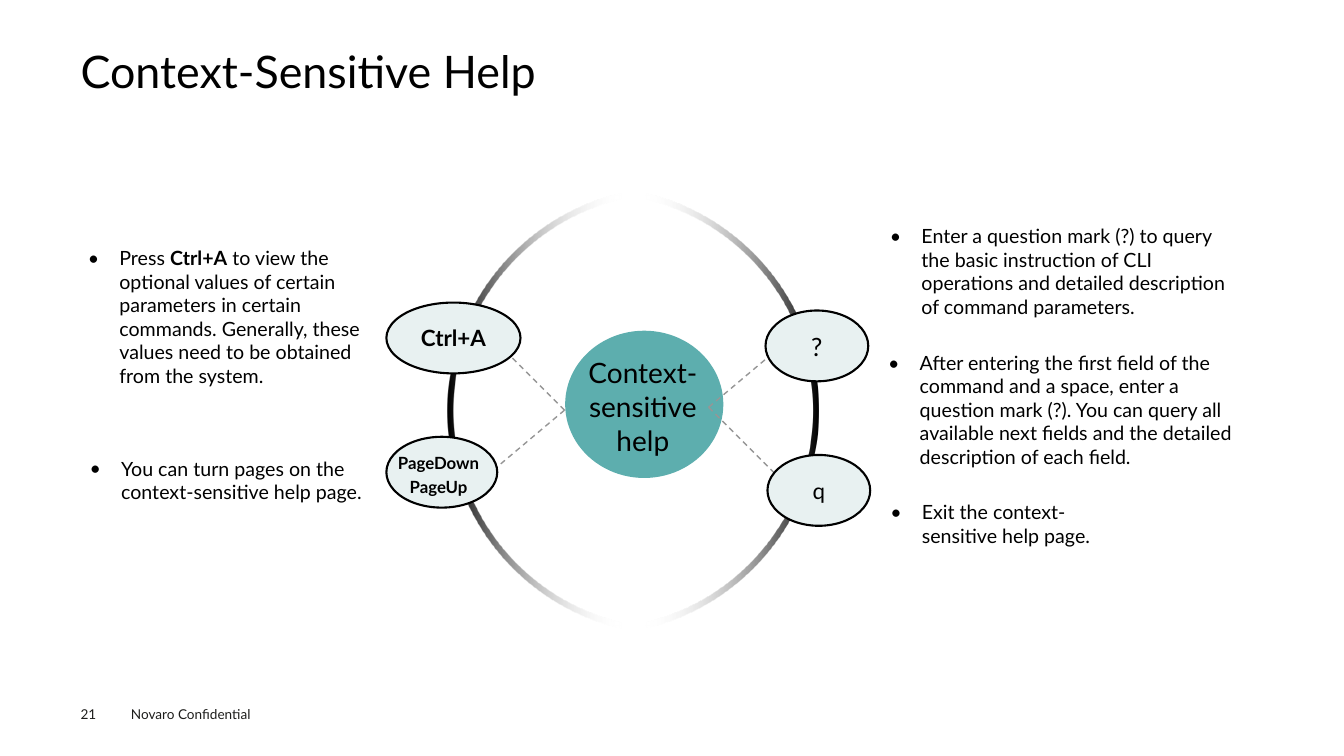
"""Build the Context-Sensitive Help slide."""
from lxml import etree
from pptx import Presentation
from pptx import util as u
from pptx.dml.color import RGBColor
from pptx.enum import dml, shapes, text
from pptx.oxml.ns import qn

THEME = {
    "font": "Lato", "ink": "000000", "footer_ink": "1D1D1B", "hub": "5DAEAE",
    "node": "E8F1F1", "spoke": "969696", "fade": "FFFFFF",
    "title": 32, "hub_size": 20, "body": 14, "key": 12, "footer": 9.7,
}
INSET = (7.2, 3.6)
TITLE = ("Context-Sensitive Help", (57.6, 35.3, 844.6, 38.9))
FOOTERS = [
    ("Novaro Confidential", (86.4, 500.4, 115, 19.4), INSET),
    ("21", (57.6, 504, 39.6, 11.5), (0, 0)),
]
HUB = (403.7, 236.2, 113, 105.2)
HUB_LABEL = ("Context-sensitive help", (394.2, 250.6, 130, 94.3))
NOTES = [
    ([("Enter a question mark (?) to query the basic instruction of CLI operations "
       "and detailed description of command parameters.", False)], (628.6, 156.5, 256, 104.4)),
    ([("After entering the first field of the command and a space, enter a question "
       "mark (?). You can query all available next fields and the detailed "
       "description of each field.", False)], (627.4, 247, 274, 123.8)),
    ([("Exit the context-sensitive help page.", False)], (628.9, 353.5, 188, 46)),
    ([("Press ", False), ("Ctrl+A", True),
      (" to view the optional values of certain parameters in certain commands. "
       "Generally, these values need to be obtained from the system.", False)],
     (55.7, 172.1, 232.6, 123.8)),
    ([("You can turn pages on the context-sensitive help page.", False)],
     (56.9, 322.6, 226.8, 65.5)),
]
NODES = [
    ("Ctrl+A", (276, 216.1, 95.8, 50.6), 16, True),
    ("", (276, 312, 79.2, 50.6), 12, True),
    ("?", (546.8, 221.8, 73.4, 50.6), 18, False),
    ("q", (548.2, 325, 73.4, 50.6), 16, False),
]
PAGE_KEYS = (["PageDown", "PageUp"], (267.3, 320, 92, 40))
SPOKES = [
    ((506.2, 290.9), [(560.9, 244.8), (560.9, 345.6)]),
    ((403.2, 293), [(348.5, 339.1), (348.5, 238.3)]),
]
ARC_Y, OUTER, INNER, ROUNDNESS = 293.3, 159.1, 154.8, 0.55
ARCS = [
    (425.5, 1, [("fade", 0.22, 0), ("ink", 1, 100000)]),
    (478.8, -1, [("ink", 0, 100000), ("fade", 0.78, 0)]),
]


def color(name):
    return RGBColor.from_string(THEME[name])


def set_font(font, size, bold=False, ink="ink"):
    font.name, font.size, font.bold = THEME["font"], u.Pt(size), bold
    font.color.rgb = color(ink)


def set_insets(frame, inset):
    frame.margin_left = frame.margin_right = u.Pt(inset[0])
    frame.margin_top = frame.margin_bottom = u.Pt(inset[1])


def add_text(page, lines, area, size, align=None, inset=INSET, bold=False, ink="ink"):
    frame = page.shapes.add_textbox(*map(u.Pt, area)).text_frame
    frame.word_wrap = True
    set_insets(frame, inset)
    frame.text = "\n".join(lines)
    for para in frame.paragraphs:
        para.alignment = align
        set_font(para.font, size, bold, ink)
    return frame


def add_note(page, spans, area):
    frame = add_text(page, [""], area, THEME["body"])
    para = frame.paragraphs[0]
    properties = para._p.get_or_add_pPr()
    properties.set("marL", str(u.Pt(22.5)))
    properties.set("indent", str(-u.Pt(22.5)))
    properties.insert(0, etree.Element(qn("a:buFont"), typeface=THEME["font"]))
    properties.insert(1, etree.Element(qn("a:buChar"), char="•"))
    for wording, bold in spans:
        span = para.add_run()
        span.text = wording
        if bold:
            span.font.bold = True


def add_ellipse(page, area, fill, outlined):
    ellipse = page.shapes.add_shape(shapes.MSO_SHAPE.OVAL, *map(u.Pt, area))
    ellipse.shadow.inherit = False
    ellipse.fill.solid()
    ellipse.fill.fore_color.rgb = color(fill)
    if outlined:
        ellipse.line.color.rgb = color("ink")
        ellipse.line.width = u.Pt(1.5)
    else:
        ellipse.line.fill.background()
    return ellipse


def add_node(page, label, area, size, bold):
    frame = add_ellipse(page, area, "node", True).text_frame
    if label:
        set_insets(frame, (0, 0))
        frame.vertical_anchor = text.MSO_ANCHOR.MIDDLE
        frame.text = label
        para = frame.paragraphs[0]
        para.alignment = text.PP_ALIGN.CENTER
        set_font(para.font, size, bold)


def bend_lines(arc, starts):
    """Merge three line segments from each start into one curve."""
    lines = list(arc._element.iter(qn("a:lnTo")))
    for start in starts:
        curve = etree.Element(qn("a:cubicBezTo"))
        lines[start].addprevious(curve)
        for line in lines[start:start + 3]:
            curve.append(line[0])
            line.getparent().remove(line)


def add_arc(page, center, side, stops):
    half = [(0, -1), (ROUNDNESS, -1), (1, -ROUNDNESS), (1, 0),
            (1, ROUNDNESS), (ROUNDNESS, 1), (0, 1)]
    rim = [(OUTER, x, y) for x, y in half] + [(INNER, x, y) for x, y in reversed(half)]
    points = [(u.Pt(center + side * radius * x), u.Pt(ARC_Y + radius * y))
              for radius, x, y in rim]
    builder = page.shapes.build_freeform(*points[0])
    builder.add_line_segments(points[1:], close=True)
    arc = builder.convert_to_shape()
    bend_lines(arc, (0, 3, 7, 10))
    arc.shadow.inherit = False
    arc.line.fill.background()
    arc.fill.gradient()
    arc.fill.gradient_angle = 0
    for stop, (name, position, _) in zip(arc.fill.gradient_stops, stops):
        stop.color.rgb = color(name)
        stop.position = position
    tints = arc._element.spPr.find(qn("a:gradFill")).iter(qn("a:srgbClr"))
    for tint, (_, _, opacity) in zip(tints, stops):
        etree.SubElement(tint, qn("a:alpha"), val=str(opacity))


def add_spoke(page, start, end):
    spoke = page.shapes.add_connector(shapes.MSO_CONNECTOR.STRAIGHT, *map(u.Pt, start + end))
    spoke.line.color.rgb = color("spoke")
    spoke.line.width = u.Pt(1)
    spoke.line.dash_style = dml.MSO_LINE.DASH
    etree.SubElement(spoke._element.spPr, qn("a:effectLst"))


def main():
    deck = Presentation()
    deck.slide_width, deck.slide_height = u.Pt(960), u.Pt(540)
    page = deck.slides.add_slide(deck.slide_layouts[6])
    center = text.PP_ALIGN.CENTER

    for wording, area, inset in FOOTERS:
        add_text(page, [wording], area, THEME["footer"], inset=inset, ink="footer_ink")
    title = add_text(page, [TITLE[0]], TITLE[1], THEME["title"], inset=(0, 0))
    title.paragraphs[0].line_spacing = 0.9

    add_ellipse(page, HUB, "hub", False)
    for arc in ARCS:
        add_arc(page, *arc)
    for start, ends in SPOKES:
        for end in ends:
            add_spoke(page, start, end)
    add_text(page, [HUB_LABEL[0]], HUB_LABEL[1], THEME["hub_size"], center)
    for node in NODES:
        add_node(page, *node)
    keys = add_text(page, *PAGE_KEYS, THEME["key"], center, bold=True)
    keys.paragraphs[1].space_before = u.Pt(2.7)
    for note in NOTES:
        add_note(page, *note)
    deck.save("out.pptx")


if __name__ == "__main__":
    main()
